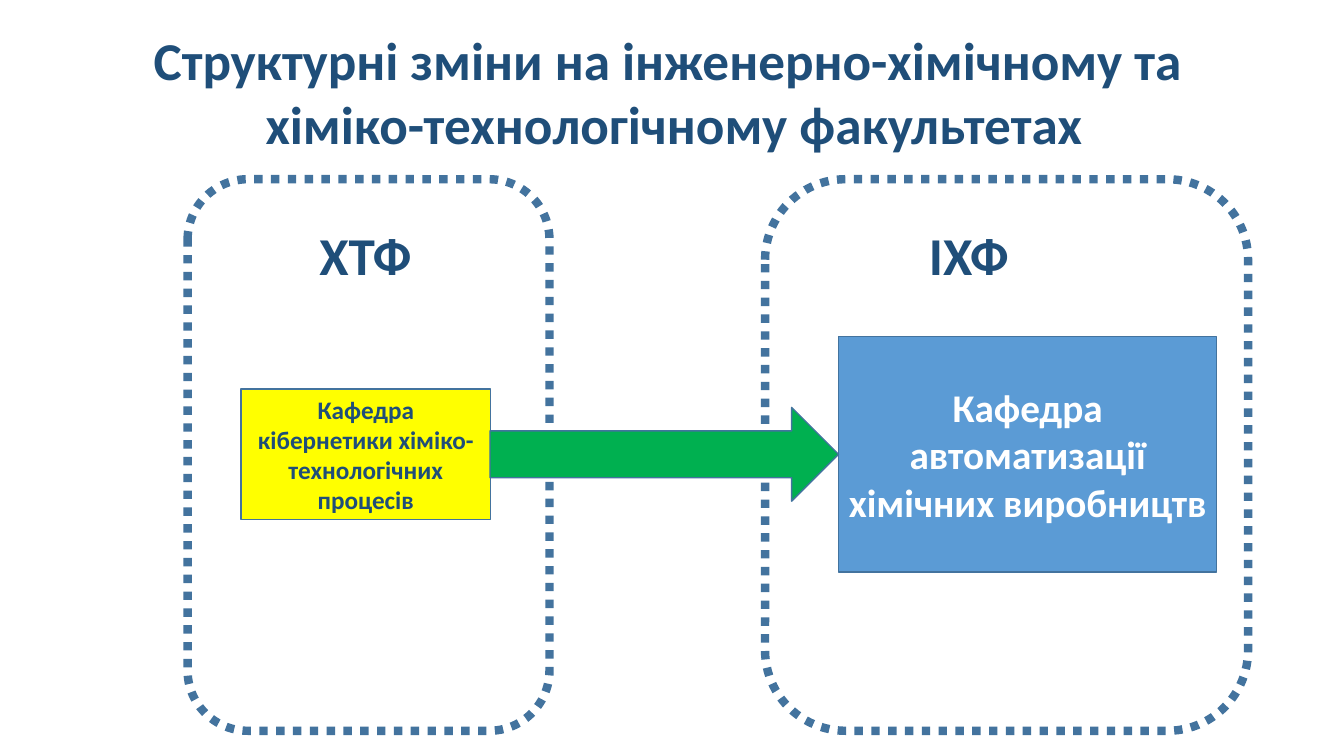
from pptx import Presentation
from pptx.dml.color import RGBColor
from pptx.enum.dml import MSO_LINE
from pptx.enum.shapes import MSO_SHAPE
from pptx.enum.text import MSO_ANCHOR, MSO_AUTO_SIZE, PP_ALIGN
from pptx.util import Pt

NAVY, EDGE, WHITE = "1F4E79", "43739E", "FFFFFF"


def paint(color, code):
    color.rgb = RGBColor.from_string(code)


def write(frame, text, size, code, anchor):
    frame.text = text
    frame.word_wrap = True
    frame.auto_size = MSO_AUTO_SIZE.NONE
    frame.vertical_anchor = anchor
    frame.margin_left = frame.margin_right = Pt(7.2)
    frame.margin_top = frame.margin_bottom = Pt(3.6)
    for para in frame.paragraphs:
        para.alignment = PP_ALIGN.CENTER
        para.line_spacing = 1.0
        para.space_before = Pt(0)
        font = para.font
        font.name, font.size, font.bold = "Calibri", Pt(size), True
        paint(font.color, code)


deck = Presentation()
deck.slide_width, deck.slide_height = Pt(960), Pt(540)
slide = deck.slides.add_slide(deck.slide_layouts[5])
shapes = slide.shapes

# Title
title = shapes.title
title.left, title.top, title.width, title.height = Pt(3.6), Pt(15.8), Pt(956), Pt(100)
heading = ("Структурні зміни на інженерно-хімічному та \n"
           "хіміко-технологічному факультетах")
write(title.text_frame, heading, 38, NAVY, MSO_ANCHOR.TOP)

# Faculty names
for name, mid in (("ХТФ", 261), ("ІХФ", 692)):
    label = shapes.add_textbox(Pt(mid - 60), Pt(155), Pt(120), Pt(53.6))
    write(label.text_frame, name, 38, NAVY, MSO_ANCHOR.TOP)

# Departments, dotted faculty frames and the transfer arrow
parts = [
    (MSO_SHAPE.RECTANGLE, 172, 278, 178.5, 93, "FFFF00",
     "Кафедра кібернетики хіміко-технологічних процесів", 18, NAVY),
    (MSO_SHAPE.RECTANGLE, 599, 240.5, 270, 168, "5B9BD5",
     "Кафедра автоматизації хімічних виробництв", 28, WHITE),
    (MSO_SHAPE.ROUNDED_RECTANGLE, 134, 128, 258.5, 394, None, "", 18, NAVY),
    (MSO_SHAPE.ROUNDED_RECTANGLE, 546.5, 128, 345, 394, None, "", 18, NAVY),
    (MSO_SHAPE.RIGHT_ARROW, 350, 291, 249, 67, "00B050", "", 18, NAVY),
]
for kind, left, top, width, height, fill, text, size, ink in parts:
    shape = shapes.add_shape(kind, Pt(left), Pt(top), Pt(width), Pt(height))
    shape.shadow.inherit = False
    paint(shape.line.color, EDGE)
    if fill:
        shape.fill.solid()
        paint(shape.fill.fore_color, fill)
        shape.line.width = Pt(1)
    else:
        shape.fill.background()
        shape.line.width = Pt(6)
        shape.line.dash_style = MSO_LINE.ROUND_DOT
    if text:
        write(shape.text_frame, text, size, ink, MSO_ANCHOR.MIDDLE)

deck.save("out.pptx")
